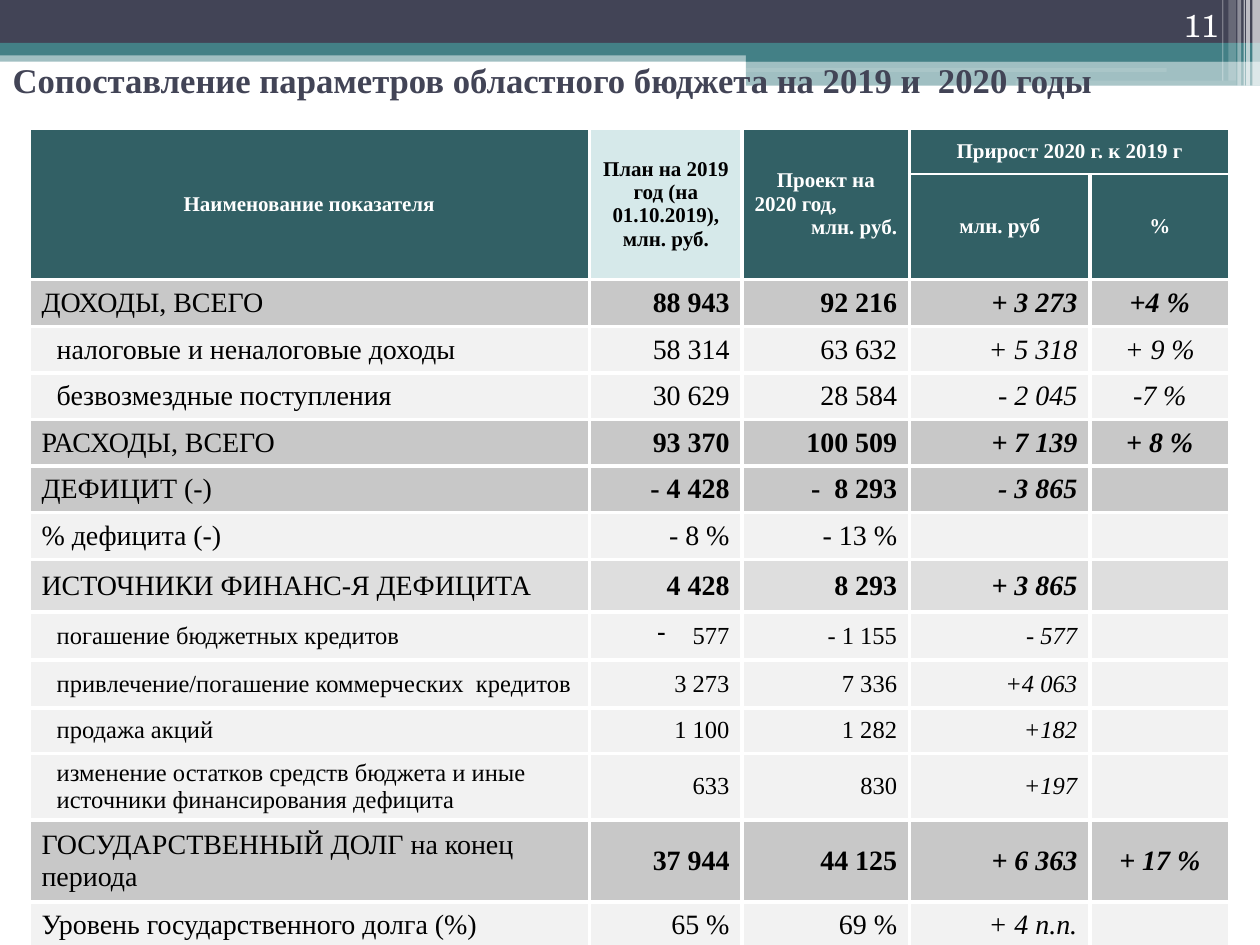
from lxml.etree import SubElement
from pptx import Presentation
from pptx.dml.color import RGBColor
from pptx.enum.shapes import MSO_SHAPE
from pptx.enum.text import MSO_ANCHOR, PP_ALIGN
from pptx.oxml import parse_xml
from pptx.oxml.ns import nsdecls, qn
from pptx.util import Inches, Pt

SERIF = "Times New Roman"
NAVY, TEAL, WHITE, BLACK = "424456", "438086", "FFFFFF", "000000"
HEAD, HEAD_PALE = "326065", "D6E9EA"
TOTAL, SOURCES, DETAIL = "C8C8C8", "DEDEDE", "F2F2F2"
LEFT, CENTER, RIGHT = PP_ALIGN.LEFT, PP_ALIGN.CENTER, PP_ALIGN.RIGHT

COLUMN_WIDTHS = [4.45, 1.21, 1.33, 1.43, 1.11]
COLUMN_ALIGNS = [LEFT, RIGHT, RIGHT, RIGHT, CENTER]
HEADER_HEIGHTS = [0.36, 0.84]

# height, fill, text size, indent, values
BODY_ROWS = [
    (0.37, TOTAL, 16, 0, ["ДОХОДЫ, ВСЕГО", "88 943", "92 216", "+ 3 273", "+4 %"]),
    (0.37, DETAIL, 16, 0.12, ["налоговые и неналоговые доходы", "58 314", "63 632", "+ 5 318", "+ 9 %"]),
    (0.37, DETAIL, 16, 0.12, ["безвозмездные поступления", "30 629", "28 584", "- 2 045", "-7 %"]),
    (0.37, TOTAL, 16, 0, ["РАСХОДЫ, ВСЕГО", "93 370", "100 509", "+ 7 139", "+ 8 %"]),
    (0.37, TOTAL, 16, 0, ["ДЕФИЦИТ (-)", "- 4 428", "-  8 293", "- 3 865", ""]),
    (0.37, DETAIL, 16, 0, ["% дефицита (-)", "- 8 %", "- 13 %", "", ""]),
    (0.42, SOURCES, 16, 0, ["ИСТОЧНИКИ ФИНАНС-Я ДЕФИЦИТА", "4 428", "8 293", "+ 3 865", ""]),
    (0.38, DETAIL, 14, 0.12, ["погашение бюджетных кредитов", "577", "- 1 155", "- 577", ""]),
    (0.38, DETAIL, 14, 0.12, ["привлечение/погашение коммерческих  кредитов", "3 273", "7 336", "+4 063", ""]),
    (0.36, DETAIL, 14, 0.12, ["продажа акций", "1 100", "1 282", "+182", ""]),
    (0.53, DETAIL, 14, 0.12, ["изменение остатков средств бюджета и иные источники финансирования дефицита",
                              "633", "830", "+197", ""]),
    (0.65, TOTAL, 16, 0, ["ГОСУДАРСТВЕННЫЙ ДОЛГ на конец периода", "37 944", "44 125", "+ 6 363", "+ 17 %"]),
    (0.37, DETAIL, 16, 0, ["Уровень государственного долга (%)", "65 %", "69 %", "+ 4 п.п.", ""]),
]
BULLET_CELL = (9, 1)

# left, top, width, height, colour, opacity in percent
BANDS = [
    (0, 0.4, 10, 0.09, TEAL, 50),
    (0, 0, 10, 0.34, NAVY, 100),
    (0, 0.34, 10, 0.1, TEAL, 100),
    (5.92, 0.39, 4.08, 0.1, TEAL, 100),
    (5.92, 0.48, 4.08, 0.2, TEAL, 50),
]
HIGHLIGHTS = [
    (5.91, 0.54, 3.35, 0.03, WHITE, 11),
    (8.06, 0.64, 1.75, 0.04, WHITE, 11),
]
STRIPES = [
    (9.94, 0, 0.06, 0.68, WHITE, 65),
    (9.89, 0, 0.03, 0.68, WHITE, 65),
    (9.87, 0, 0.01, 0.68, WHITE, 60),
    (9.82, 0, 0.03, 0.68, WHITE, 40),
    (9.75, 0, 0.06, 0.64, WHITE, 20),
    (9.7, 0, 0.01, 0.64, WHITE, 30),
]


def paint(fill, color, opacity=100):
    fill.solid()
    fill.fore_color.rgb = RGBColor.from_string(color)
    if opacity < 100:
        tint = fill._xPr.find(qn("a:solidFill"))[0]
        SubElement(tint, qn("a:alpha"), val=str(opacity * 1000))


def write(para, text, align, size, color=BLACK, **format_values):
    para.alignment = align
    span = para.add_run()
    span.text = text
    span.font.color.rgb = RGBColor.from_string(color)
    values = {"name": SERIF, "size": Pt(size), **format_values}
    for name, value in values.items():
        setattr(span.font, name, value)


def add_bars(page, box, bars, kind):
    left, top = box
    for x, y, width, height, color, opacity in bars:
        bar = page.shapes.add_shape(kind, Inches(left + x), Inches(top + y), Inches(width), Inches(height))
        bar.shadow.inherit = False
        bar.line.fill.background()
        paint(bar.fill, color, opacity)


def add_page_number(page, box):
    frame = page.shapes.add_textbox(*map(Inches, box)).text_frame
    frame.word_wrap = True
    frame.vertical_anchor = MSO_ANCHOR.BOTTOM
    write(frame.paragraphs[0], "11", RIGHT, 18, WHITE, name="TeX Gyre Schola")


def place_title(page, box):
    title = page.shapes.title
    for name, value in zip(("left", "top", "width", "height"), box):
        setattr(title, name, Inches(value))
    page.shapes._spTree.append(title._element)  # in front of the bands
    title.text_frame.vertical_anchor = MSO_ANCHOR.MIDDLE
    write(title.text_frame.paragraphs[0], "Сопоставление параметров областного бюджета на 2019 и  2020 годы",
          LEFT, 19.8, NAVY, bold=True)


def style_cell(cell, fill, thin_side=None):
    """Fills the cell and draws white borders, the thin side at 1 pt."""
    cell.vertical_anchor = MSO_ANCHOR.MIDDLE
    paint(cell.fill, fill)
    for position, side in enumerate("LRTB"):
        width = Pt(1 if side == thin_side else 2.25)
        cell._tc.tcPr.insert(position, parse_xml(
            f'<a:ln{side} {nsdecls("a")} w="{width}"><a:solidFill>'
            f'<a:srgbClr val="{WHITE}"/></a:solidFill></a:ln{side}>'))
    end = cell.text_frame.paragraphs[0]._p.get_or_add_endParaRPr()
    end.set("sz", "1200")


def fill_header(table):
    for row in range(2):
        for column in range(5):
            thin_side = "BT"[row] if column > 2 else None
            style_cell(table.cell(row, column), HEAD_PALE if column == 1 else HEAD, thin_side)
    for column in range(3):
        table.cell(0, column).merge(table.cell(1, column))
    table.cell(0, 3).merge(table.cell(0, 4))

    labels = {
        (0, 0): [("Наименование показателя", CENTER)],
        (0, 1): [("План на 2019 год (на 01.10.2019),", CENTER), ("млн. руб.", CENTER)],
        (0, 2): [("Проект на", CENTER), ("2020 год,", LEFT), ("млн. руб.", RIGHT)],
        (0, 3): [("Прирост 2020 г. к 2019 г", CENTER)],
        (1, 3): [("млн. руб", CENTER)],
        (1, 4): [("%", CENTER)],
    }
    for (row, column), lines in labels.items():
        frame = table.cell(row, column).text_frame
        for index, (text, align) in enumerate(lines):
            para = frame.add_paragraph() if index else frame.paragraphs[0]
            write(para, text, align, 12, BLACK if column == 1 else WHITE, bold=True)


def fill_body(table):
    for row, (_, fill, size, indent, values) in enumerate(BODY_ROWS, len(HEADER_HEIGHTS)):
        for column, text in enumerate(values):
            cell = table.cell(row, column)
            style_cell(cell, fill)
            para = cell.text_frame.paragraphs[0]
            if text:
                write(para, text, COLUMN_ALIGNS[column], size,
                      bold=column > 0 and fill != DETAIL, italic=column > 2)
            if column == 0 and indent:
                para._p.get_or_add_pPr().set("marL", str(Inches(indent)))
            if (row, column) == BULLET_CELL:
                props = para._p.get_or_add_pPr()
                props.set("marL", str(Inches(0.28)))
                props.set("indent", str(-Inches(0.28)))
                SubElement(props, qn("a:buChar"), char="-")


def add_budget_table(page, box):
    heights = HEADER_HEIGHTS + [row[0] for row in BODY_ROWS]
    table = page.shapes.add_table(len(heights), len(COLUMN_WIDTHS), *map(Inches, box)).table
    for column, width in zip(table.columns, COLUMN_WIDTHS):
        column.width = Inches(width)
    for row, height in zip(table.rows, heights):
        row.height = Inches(height)
    fill_header(table)
    fill_body(table)


def main():
    deck = Presentation()
    deck.slide_width, deck.slide_height = Inches(10), Inches(7.5)
    page = deck.slides.add_slide(deck.slide_layouts[5])
    paint(page.background.fill, WHITE)
    add_bars(page, (0, 0), BANDS, MSO_SHAPE.RECTANGLE)
    add_bars(page, (0, 0), HIGHLIGHTS, MSO_SHAPE.ROUNDED_RECTANGLE)
    add_bars(page, (0, 0), STRIPES, MSO_SHAPE.RECTANGLE)
    add_page_number(page, (8.94, 0, 0.83, 0.4))
    place_title(page, (0, 0.4, 9.69, 0.47))
    add_budget_table(page, (0.23, 1.02, 9.53, 6.5))
    deck.save("out.pptx")


if __name__ == "__main__":
    main()
